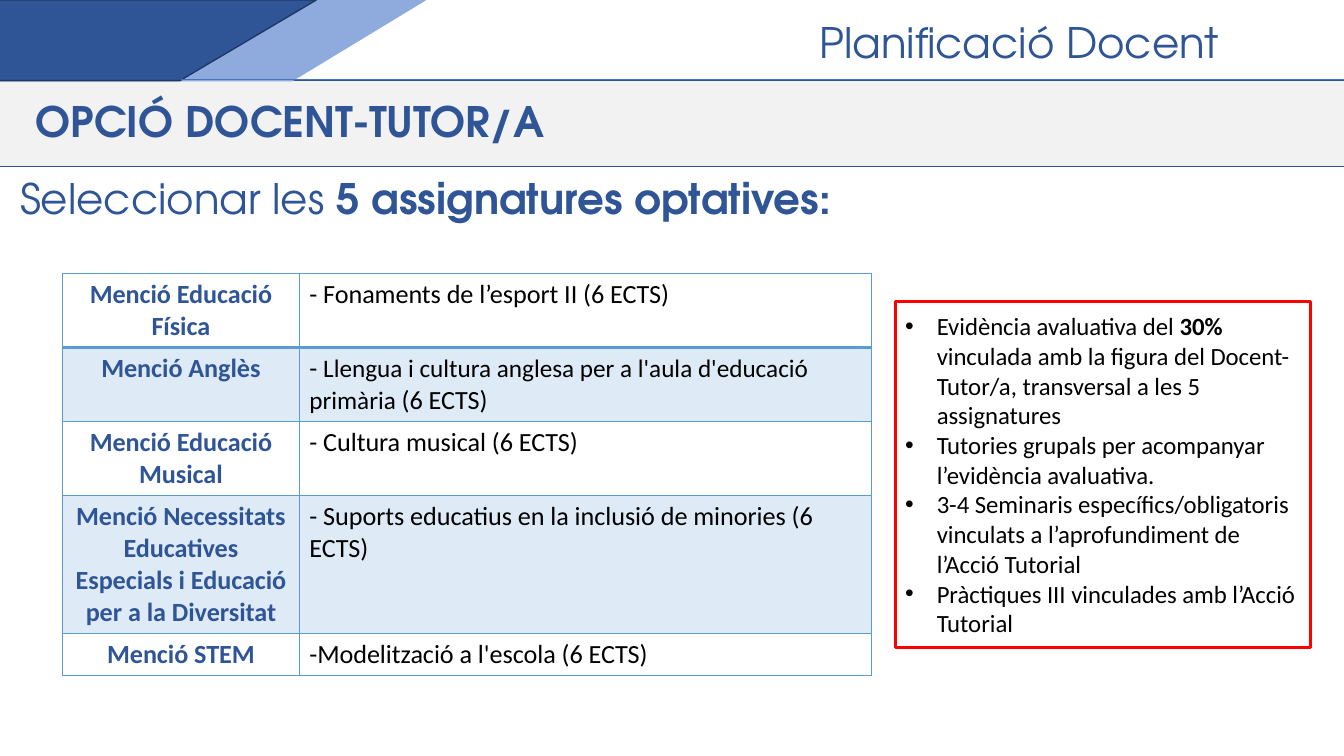
from dataclasses import dataclass

from lxml import etree
from pptx import Presentation
from pptx.dml.color import RGBColor
from pptx.enum import shapes, text
from pptx.oxml import ns
from pptx.util import Pt


@dataclass(frozen=True)
class Theme:
    navy: str = "2F5597"
    edge: str = "203864"
    rule: str = "325491"
    hair: str = "4472C4"
    light: str = "8FAADC"
    grey: str = "F2F2F2"
    grid: str = "5B9BD5"
    tint: str = "DEEBF7"
    red: str = "FF0000"
    black: str = "000000"
    head: str = "TeX Gyre Adventor"
    body: str = "Calibri"
    big: float = 30
    cell: float = 18.67
    small: float = 18
    note: float = 17.7


def color(code):
    return RGBColor.from_string(code)


def node(parent, tag, **attrs):
    return etree.SubElement(parent, ns.qn(tag), attrs)


class Deck:
    def __init__(self, theme):
        self.theme = theme
        self.prs = Presentation()
        self.prs.slide_width, self.prs.slide_height = Pt(960), Pt(540)
        self.slide = self.prs.slides.add_slide(self.prs.slide_layouts[1])

    def place(self, shape, left, top, width, height):
        shape.left, shape.top = Pt(left), Pt(top)
        shape.width, shape.height = Pt(width), Pt(height)

    def lift(self, holder):
        """Bring a placeholder in front of everything drawn so far."""
        tree = holder.element.getparent()
        tree.append(holder.element)

    def runs(self, para, parts, size, tone, font, align=text.PP_ALIGN.LEFT):
        """Add runs; each part is (words, bold) or (words, bold, size)."""
        para.alignment = align
        para.space_before = Pt(0)
        for words, bold, *own in parts:
            run = para.add_run()
            run.text = words
            run.font.name = font
            run.font.size = Pt(own[0] if own else size)
            run.font.bold = bold
            run.font.color.rgb = color(tone)

    def shape(self, kind, box, fill, line):
        item = self.slide.shapes.add_shape(kind, *map(Pt, box))
        item.shadow.inherit = False
        item.fill.solid()
        item.fill.fore_color.rgb = color(fill)
        item.line.color.rgb = color(line)
        item.line.width = Pt(1)

    def rule(self, left, right, top, tone, width):
        item = self.slide.shapes.add_connector(
            shapes.MSO_CONNECTOR.STRAIGHT, Pt(left), Pt(top), Pt(right), Pt(top))
        item.line.color.rgb = color(tone)
        item.line.width = Pt(width)
        node(item.element.spPr, "a:effectLst")

    def heading(self, item, parts, wrap, align=text.PP_ALIGN.LEFT):
        frame = item.text_frame
        frame.word_wrap = wrap
        frame.auto_size = text.MSO_AUTO_SIZE.NONE
        frame.vertical_anchor = text.MSO_ANCHOR.TOP
        self.runs(frame.paragraphs[0], parts, self.theme.big,
                  self.theme.navy, self.theme.head, align)

    def label(self, box, parts, wrap, align=text.PP_ALIGN.LEFT):
        item = self.slide.shapes.add_textbox(*map(Pt, box))
        self.heading(item, parts, wrap, align)

    def title(self, box, words):
        item = self.slide.shapes.title
        self.lift(item)
        self.place(item, *box)
        self.heading(item, [(words, True)], False)

    def points(self, box, items, indent):
        holder = self.slide.placeholders[1]
        self.lift(holder)
        self.place(holder, *box)
        holder.line.color.rgb = color(self.theme.red)
        holder.line.width = Pt(2.25)
        frame = holder.text_frame
        frame.word_wrap = True
        frame.auto_size = text.MSO_AUTO_SIZE.NONE
        frame.vertical_anchor = text.MSO_ANCHOR.MIDDLE
        for i, parts in enumerate(items):
            para = frame.add_paragraph() if i else frame.paragraphs[0]
            props = para._p.get_or_add_pPr()
            props.set("marL", str(Pt(indent)))
            props.set("indent", str(-Pt(indent)))
            node(props, "a:buFont", typeface="Arial")
            node(props, "a:buChar", char="•")
            self.runs(para, parts, self.theme.note, self.theme.black,
                      self.theme.body)

    def border(self, cell, widths):
        """Draw the left, right, top and bottom edges of a cell."""
        props = cell._tc.get_or_add_tcPr()
        for side, width in zip("LRTB", widths):
            line = node(props, "a:ln" + side, w=str(Pt(width)))
            fill = node(line, "a:solidFill")
            node(fill, "a:srgbClr", val=self.theme.grid)

    def table(self, left, top, cols, rows):
        """Fill a grid; each row is (line count, name, parts)."""
        tall = [7.4 + 22.7 * lines for lines, _, _ in rows]
        grid = self.slide.shapes.add_table(
            len(rows), len(cols), Pt(left), Pt(top),
            Pt(sum(cols)), Pt(sum(tall))).table
        grid.first_row = grid.horz_banding = False
        for col, width in zip(grid.columns, cols):
            col.width = Pt(width)
        for i, (_, name, parts) in enumerate(rows):
            grid.rows[i].height = Pt(tall[i])
            cells = (
                ([(name, True)], self.theme.navy, text.PP_ALIGN.CENTER),
                (parts, self.theme.black, text.PP_ALIGN.LEFT))
            for j, (words, tone, align) in enumerate(cells):
                cell = grid.cell(i, j)
                self.border(cell, (1, 1, 2 if i == 1 else 1, 2 if i == 0 else 1))
                if i % 2:
                    cell.fill.solid()
                    cell.fill.fore_color.rgb = color(self.theme.tint)
                else:
                    cell.fill.background()
                self.runs(cell.text_frame.paragraphs[0], words,
                          self.theme.cell, tone, self.theme.body, align)


def main():
    theme = Theme()
    deck = Deck(theme)
    kind = shapes.MSO_SHAPE

    deck.shape(kind.RECTANGLE, (-62.6, 57.6, 1097.3, 61.2), theme.grey, theme.rule)
    slant = kind.FLOWCHART_DATA
    deck.shape(slant, (-171.4, 0, 475.2, 57.6), theme.light, theme.light)
    deck.shape(slant, (-261.4, 0, 487.4, 57.6), theme.navy, theme.edge)
    deck.rule(129, 996.5, 57, theme.hair, 0.5)

    deck.label((578.2, 7.9, 303.8, 43.9), [("Planificació Docent", False)],
               False, text.PP_ALIGN.JUSTIFY)
    deck.title((18, 64.8, 381.6, 43.9), "OPCIÓ DOCENT-TUTOR/A")
    deck.label((7.2, 119.5, 958.3, 43.9),
               [("Seleccionar les ", False), ("5 assignatures optatives:", True)],
               True)

    deck.table(44.6, 195.5, (169.2, 409), [
        (2, "Menció Educació Física",
         [("- Fonaments de l’esport II (6 ECTS)", False)]),
        (2, "Menció Anglès",
         [("- ", False),
          ("Llengua i cultura anglesa per a l'aula d'educació primària ",
           False, theme.small),
          ("(6 ECTS)", False)]),
        (2, "Menció Educació Musical",
         [("- Cultura musical (6 ECTS)", False)]),
        (4, "Menció Necessitats Educatives Especials i Educació per a la Diversitat",
         [("- Suports educatius en la inclusió de minories (6 ECTS)", False)]),
        (1, "Menció STEM",
         [("-Modelització a l'escola (6 ECTS)", False)]),
    ])

    deck.points((639.4, 215.3, 296.6, 247), [
        [("Evidència avaluativa del ", False), ("30%", True),
         (" vinculada amb la figura del Docent-Tutor/a, "
          "transversal a les 5 assignatures", False)],
        [("Tutories grupals per acompanyar l’evidència avaluativa.", False)],
        [("3-4 Seminaris específics/obligatoris vinculats a "
          "l’aprofundiment de l’Acció Tutorial", False)],
        [("Pràctiques III vinculades amb l’Acció Tutorial", False)],
    ], 22.5)

    deck.prs.save("out.pptx")


if __name__ == "__main__":
    main()
